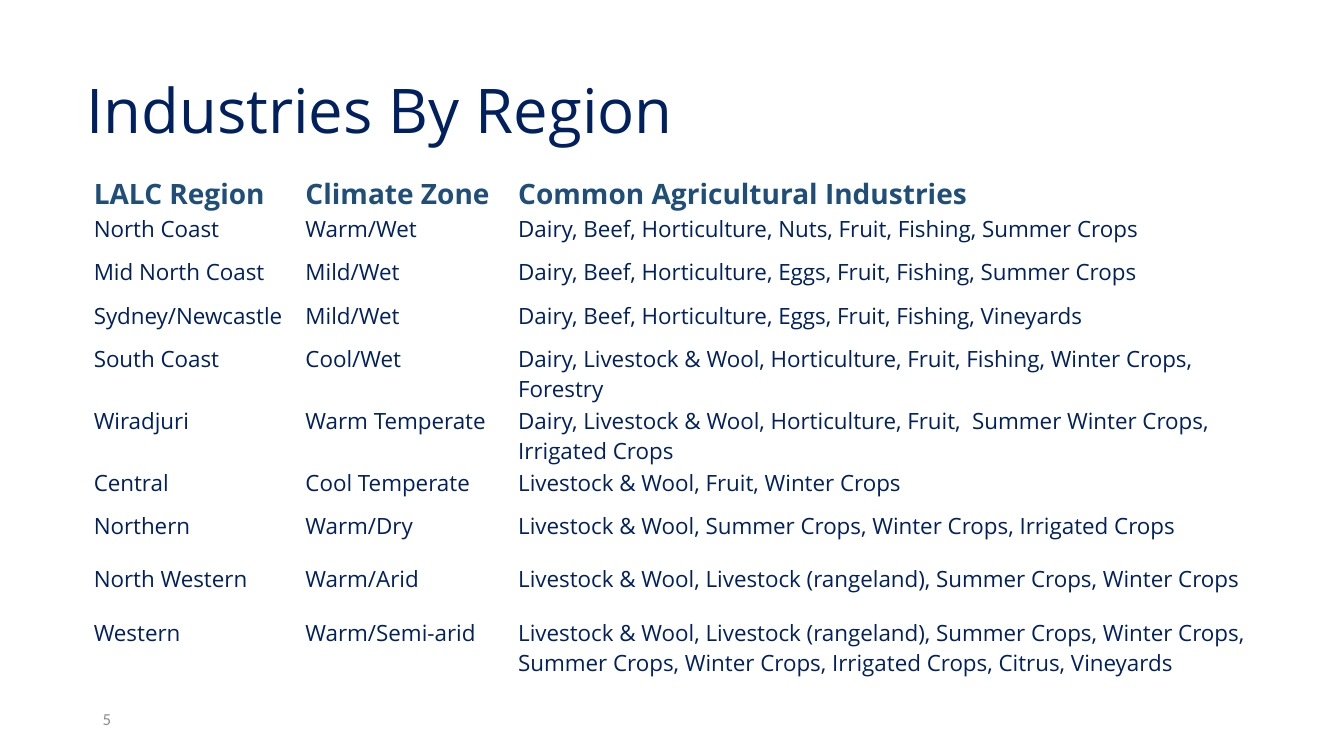
from lxml.etree import SubElement as Sub
from pptx import Presentation
from pptx.dml.color import RGBColor
from pptx.enum.text import MSO_ANCHOR as Anchor, PP_ALIGN as Align
from pptx.oxml.ns import qn
from pptx.util import Pt

PX = 9144
NAVY = RGBColor(0x00, 0x20, 0x60)
BLUE = RGBColor(0x1F, 0x4E, 0x79)
GREY = RGBColor(0x8C, 0x8C, 0x8C)
WHITE = RGBColor(0xFF, 0xFF, 0xFF)
SANS = "Open Sans"

WIDTHS = [210, 211, 729]
HEIGHTS = [43, 43, 43, 43, 53, 53, 43, 53, 53, 79]
ROWS = [
    ("LALC Region", "Climate Zone", "Common Agricultural Industries"),
    ("North Coast", "Warm/Wet",
     "Dairy, Beef, Horticulture, Nuts, Fruit, Fishing, Summer Crops"),
    ("Mid North Coast", "Mild/Wet",
     "Dairy, Beef, Horticulture, Eggs, Fruit, Fishing, Summer Crops"),
    ("Sydney/Newcastle", "Mild/Wet",
     "Dairy, Beef, Horticulture, Eggs, Fruit, Fishing, Vineyards"),
    ("South Coast", "Cool/Wet",
     "Dairy, Livestock & Wool, Horticulture, Fruit, Fishing, Winter Crops, Forestry"),
    ("Wiradjuri", "Warm Temperate",
     "Dairy, Livestock & Wool, Horticulture, Fruit,  Summer Winter Crops, Irrigated Crops"),
    ("Central", "Cool Temperate", "Livestock & Wool, Fruit, Winter Crops"),
    ("Northern", "Warm/Dry",
     "Livestock & Wool, Summer Crops, Winter Crops, Irrigated Crops"),
    ("North Western", "Warm/Arid",
     "Livestock & Wool, Livestock (rangeland), Summer Crops, Winter Crops"),
    ("Western", "Warm/Semi-arid",
     "Livestock & Wool, Livestock (rangeland), Summer Crops, Winter Crops, "
     "Summer Crops, Winter Crops, Irrigated Crops, Citrus, Vineyards"),
]


def px(*sizes):
    return [size * PX for size in sizes]


def write(frame, text, size, color, font=SANS, bold=False):
    frame.text = text
    para = frame.paragraphs[0]
    para.alignment = Align.LEFT
    face = para.runs[0].font
    face.name, face.size, face.bold = font, Pt(size), bold
    face.color.rgb = color
    return para


def add_title(slide, text):
    title = slide.shapes.title
    title.left, title.top, title.width, title.height = px(76, 40, 1150, 145)
    title.text_frame.vertical_anchor = Anchor.MIDDLE
    write(title.text_frame, text, 44, NAVY).line_spacing = 0.9


def edge(cell, head):
    props = cell._tc.get_or_add_tcPr()
    for side in "LRTB":
        width = 3 if head and side == "B" else 1
        line = Sub(props, qn(f"a:ln{side}"), w=str(Pt(width)))
        fill = Sub(line, qn("a:solidFill"))
        Sub(fill, qn("a:srgbClr"), val=str(WHITE))


def fill_cell(cell, text, head):
    edge(cell, head)
    cell.fill.background()
    cell.margin_left = cell.margin_right = cell.margin_top = PX
    cell.margin_bottom = 0
    cell.vertical_anchor = Anchor.BOTTOM if head else Anchor.TOP
    size, color = (20, BLUE) if head else (16, NAVY)
    write(cell.text_frame, text, size, color, bold=head)


def add_grid(slide):
    box = px(92, 168, sum(WIDTHS), sum(HEIGHTS))
    grid = slide.shapes.add_table(len(ROWS), len(WIDTHS), *box).table
    grid.horz_banding = False
    for col, width in zip(grid.columns, WIDTHS):
        col.width = width * PX
    for i, (row, height) in enumerate(zip(grid.rows, HEIGHTS)):
        row.height = height * PX
        for cell, text in zip(row.cells, ROWS[i]):
            fill_cell(cell, text, i == 0)


def add_number(slide, text):
    frame = slide.shapes.add_textbox(*px(92, 693, 300, 40)).text_frame
    frame.word_wrap = True
    frame.vertical_anchor = Anchor.MIDDLE
    write(frame, text, 12, GREY, "Calibri")


def main():
    deck = Presentation()
    deck.slide_width, deck.slide_height = px(1333, 750)
    slide = deck.slides.add_slide(deck.slide_layouts[5])
    add_title(slide, "Industries By Region")
    add_grid(slide)
    add_number(slide, "5")
    deck.save("out.pptx")


if __name__ == "__main__":
    main()
